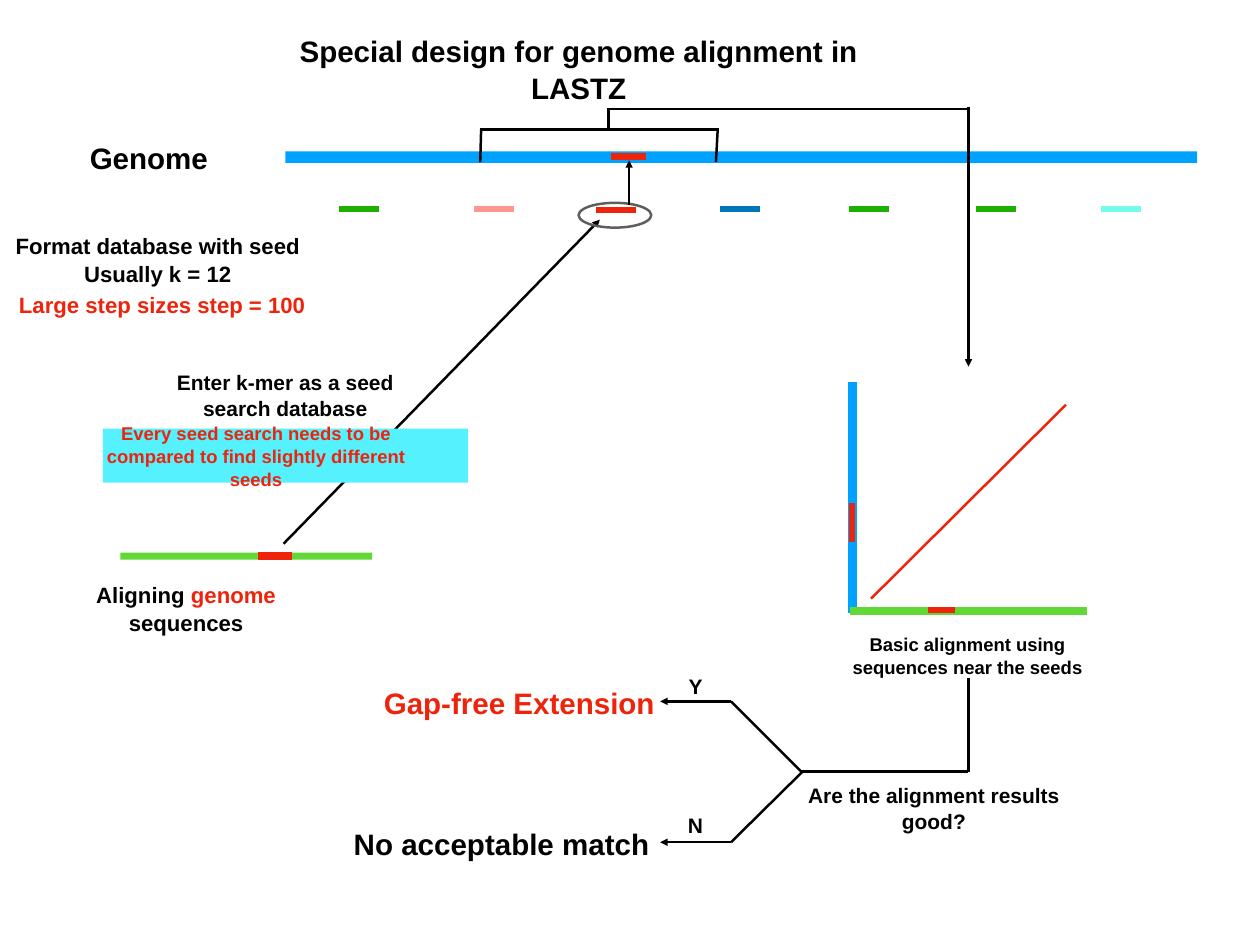
from lxml.etree import SubElement
from pptx import Presentation
from pptx.dml.color import RGBColor
from pptx.enum.shapes import MSO_CONNECTOR, MSO_SHAPE
from pptx.enum.text import MSO_ANCHOR, MSO_AUTO_SIZE, PP_ALIGN
from pptx.oxml.ns import qn
from pptx.util import Pt

PX = 9144
BLACK, RED, BLUE, LIME = "000000", "EE230C", "00A2FF", "61D836"
GREEN, CYAN, GRAY = "1EB001", "56F1FF", "5E5E5E"


def rgb(value):
    return RGBColor.from_string(value)


def emu(*lengths):
    return [n * PX for n in lengths]


class Canvas:
    font = "Arial"
    inset = 6
    spacing = 1.05

    def __init__(self, prs):
        self.slide = prs.slides.add_slide(prs.slide_layouts[5])

    def fill_text(self, sp, lines, size, color, left=6, right=6):
        tf = sp.text_frame
        tf.word_wrap = True
        tf.auto_size = MSO_AUTO_SIZE.NONE
        tf.vertical_anchor = MSO_ANCHOR.MIDDLE
        tf.margin_left, tf.margin_right = emu(left, right)
        tf.margin_top = tf.margin_bottom = self.inset * PX
        for i, line in enumerate(lines):
            p = tf.add_paragraph() if i else tf.paragraphs[0]
            p.alignment = PP_ALIGN.CENTER
            p.line_spacing = self.spacing
            p.font.name, p.font.size, p.font.bold = self.font, Pt(size), True
            p.font.color.rgb = rgb(color)
            for part in [line] if isinstance(line, str) else line:
                words, tint = (part, color) if isinstance(part, str) else part
                r = p.add_run()
                r.text = words
                if tint != color:
                    r.font.color.rgb = rgb(tint)

    def title(self, box, text, size):
        sp = self.slide.shapes.title
        sp.left, sp.top, sp.width, sp.height = emu(*box)
        self.fill_text(sp, [text], size, BLACK)

    def text(self, box, lines, size, color=BLACK):
        sp = self.slide.shapes.add_textbox(*emu(*box))
        self.fill_text(sp, lines, size, color)

    def shape(self, kind, box, fill=None, line=None):
        sp = self.slide.shapes.add_shape(kind, *emu(*box))
        sp.shadow.inherit = False
        if fill:
            sp.fill.solid()
            sp.fill.fore_color.rgb = rgb(fill)
        else:
            sp.fill.background()
        if line:
            sp.line.color.rgb = rgb(line)
            sp.line.width = Pt(2)
        else:
            sp.line.fill.background()
        return sp

    def line(self, ends, color=BLACK, width=2, arrow=False):
        sp = self.slide.shapes.add_connector(MSO_CONNECTOR.STRAIGHT, *emu(*ends))
        sp.line.color.rgb = rgb(color)
        sp.line.width = Pt(width)
        props = sp._element.spPr
        if arrow:
            SubElement(props.find(qn("a:ln")), qn("a:tailEnd"), type="triangle")
        SubElement(props, qn("a:effectLst"))


def draw_genome(c):
    c.title((308, 38, 690, 78), "Special design for genome alignment in LASTZ", 24)
    c.shape(MSO_SHAPE.RECTANGLE, (322, 171, 1029, 13), BLUE)
    c.text((88, 152, 160, 50), ["Genome"], 24)
    for ends in [(542, 183, 543, 146), (542, 146, 811, 146), (808, 183, 810, 146),
                 (687, 144, 687, 122), (686, 123, 1094, 123)]:
        c.line(ends)
    c.line((1093, 121, 1093, 414), arrow=True)


def draw_alignment_plot(c):
    for ends, color, width in [((962, 692, 962, 431), BLUE, 7),
                               ((962, 612, 962, 568), RED, 5),
                               ((959, 690, 1227, 690), LIME, 7),
                               ((1047, 689, 1078, 689), RED, 5),
                               ((983, 676, 1203, 457), RED, 2)]:
        c.line(ends, color, width)
    c.text((952, 709, 280, 61), ["Basic alignment using", "sequences near the seeds"], 15)


def draw_decision(c):
    c.line((1093, 765, 1093, 872))
    c.line((903, 871, 1093, 871))
    for y in (792, 951):
        c.line((825, y, 905, 872))
        c.line((825, y, 745, y), arrow=True)
    c.text((899, 877, 310, 70), ["Are the alignment results good?"], 17)
    c.text((765, 754, 40, 40), ["Y"], 17)
    c.text((765, 911, 40, 40), ["N"], 17)
    c.text((388, 927, 356, 50), ["No acceptable match"], 24)
    c.text((424, 767, 324, 50), ["Gap-free Extension"], 24, RED)


def draw_seed_search(c):
    c.shape(MSO_SHAPE.RECTANGLE, (136, 624, 284, 8), LIME)
    c.text((80, 650, 260, 72), [["Aligning ", ("genome", RED), " sequences"]], 18)
    c.line((291, 628, 330, 628), RED, 6)
    c.line((320, 614, 677, 248), arrow=True)
    c.shape(MSO_SHAPE.OVAL, (653, 229, 82, 28), line=GRAY)
    c.line((710, 232, 710, 181), arrow=True)
    c.line((690, 177, 729, 177), RED, 6)
    c.text((185, 411, 274, 69), ["Enter k-mer as a seed", "search database"], 17)
    note = c.shape(MSO_SHAPE.RECTANGLE, (116, 484, 412, 61), CYAN)
    c.fill_text(note, ["Every seed search needs to be",
                       "compared to find slightly different seeds"], 15, RED, 0, 66)


def draw_seeds(c):
    for x, color in [(383, GREEN), (535, "FF968D"), (673, RED), (813, "0076BA"),
                     (958, GREEN), (1102, GREEN), (1243, "72FDEA")]:
        y = 237 if color == RED else 236
        c.line((x, y, x + 45, y), color, 5)
    c.text((6, 255, 344, 74), ["Format database with seed", "Usually k = 12"], 18)
    c.text((15, 322, 336, 42), ["Large step sizes step = 100"], 18, RED)


def main():
    prs = Presentation()
    prs.slide_width, prs.slide_height = emu(1422, 1067)
    c = Canvas(prs)
    for draw in (draw_genome, draw_alignment_plot, draw_decision, draw_seed_search, draw_seeds):
        draw(c)
    prs.save("out.pptx")


if __name__ == "__main__":
    main()
